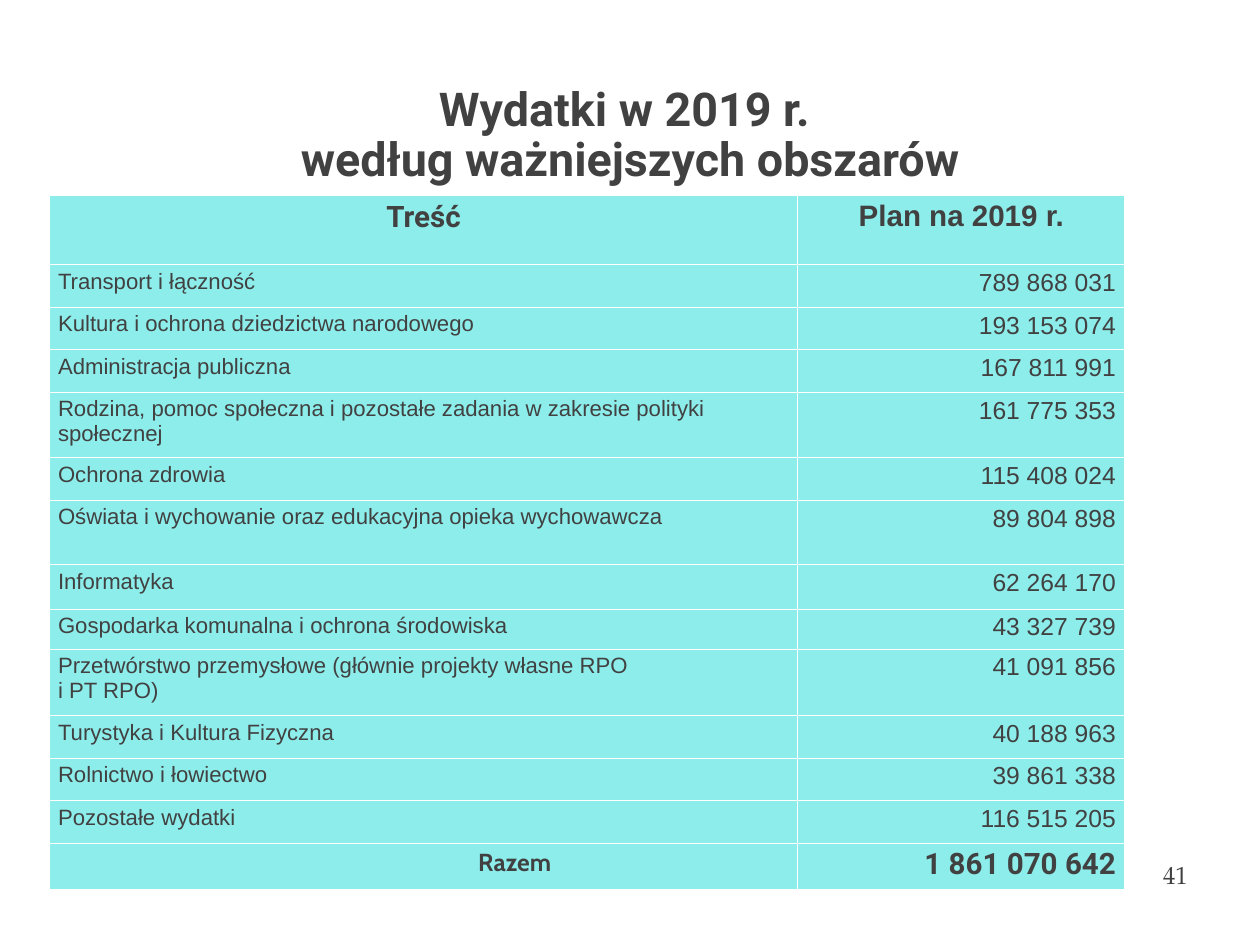
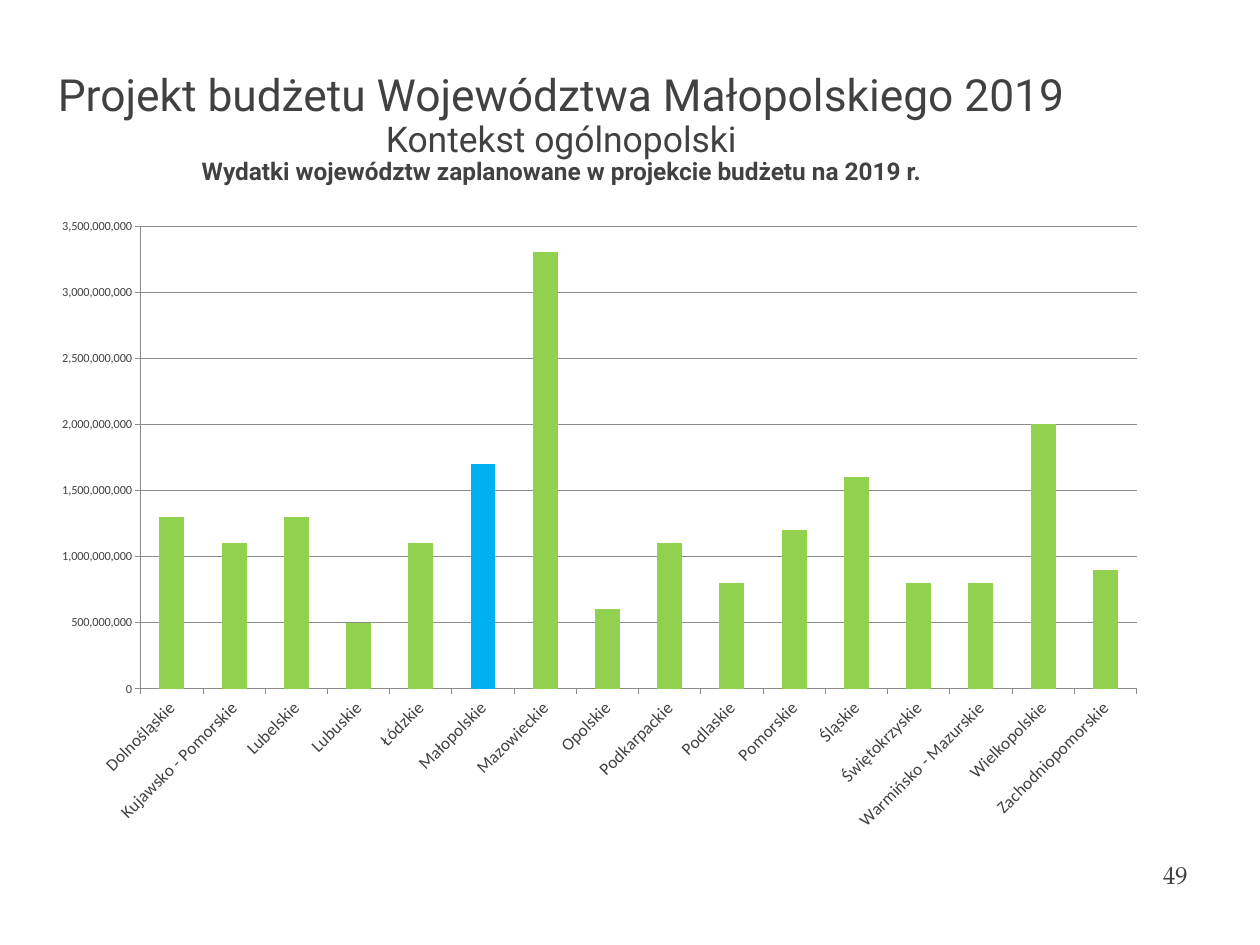
from lxml import etree
from pptx import Presentation
from pptx.chart.data import CategoryChartData
from pptx.dml.color import RGBColor
from pptx.enum.chart import XL_CHART_TYPE, XL_TICK_MARK
from pptx.enum.text import MSO_ANCHOR, PP_ALIGN
from pptx.oxml.ns import qn
from pptx.util import Inches, Pt

LEFT, CENTER, RIGHT = PP_ALIGN.LEFT, PP_ALIGN.CENTER, PP_ALIGN.RIGHT
MIDDLE = MSO_ANCHOR.MIDDLE
COLUMNS = XL_CHART_TYPE.COLUMN_CLUSTERED
TICK_OUTSIDE, TICK_NONE = XL_TICK_MARK.OUTSIDE, XL_TICK_MARK.NONE

WIDTH, HEIGHT = Inches(14.22), Inches(10.67)
COLORS = {
    "text": "414141",
    "cell": "8DEDEB",
    "border": "FFFFFF",
    "region": "92D050",
    "highlight": "00B0F0",
    "grid": "8B8B8B",
}
HEADING = {"name": "Roboto", "size": Pt(37.9), "bold": True}
MAIN_TITLE = {"name": "Roboto", "size": Pt(36), "bold": False}
SUBTITLE = {"name": "Roboto", "size": Pt(28.8), "bold": False}
CAPTION = {"name": "Roboto", "size": Pt(19.8), "bold": True}
PAGE_NUMBER = {"name": "TeX Gyre Pagella", "size": Pt(20), "bold": False}
HEAD_AREA = {"name": "Roboto", "size": Pt(24), "bold": True}
HEAD_PLAN = {"name": "Arial", "size": Pt(24), "bold": True}
AREA = {"name": "Arial", "size": Pt(18), "bold": False}
AMOUNT = {"name": "Arial", "size": Pt(20), "bold": False}
TOTAL = {"name": "Cabin", "size": Pt(20), "bold": True}


def share(left, top, width, height):
    return [int(side * part / 100) for side, part in
            zip((WIDTH, HEIGHT, WIDTH, HEIGHT), (left, top, width, height))]


def write(frame, paragraphs, align, spacing=None):
    frame.word_wrap = True
    for index, lines in enumerate(paragraphs):
        paragraph = frame.add_paragraph() if index else frame.paragraphs[0]
        paragraph.alignment = align
        paragraph.line_spacing = spacing
        for position, (text, style) in enumerate(lines):
            if position:
                paragraph.add_line_break()
            run = paragraph.add_run()
            run.text = text
            for key, value in style.items():
                setattr(run.font, key, value)
            run.font.color.rgb = RGBColor.from_string(COLORS["text"])


pages = [
    {"number": "41", "place": share(3.94, 8.2, 92.19, 12.46), "lift": 0,
     "title": [("Wydatki w 2019 r. ", HEADING),
               ("według ważniejszych obszarów", HEADING)]},
    {"number": "49", "place": share(-1.55, 12.28, 92.19, 5.81), "lift": 0.31,
     "title": [("Projekt budżetu Województwa Małopolskiego 2019", MAIN_TITLE),
               ("Kontekst ogólnopolski", SUBTITLE),
               ("Wydatki województw zaplanowane w projekcie budżetu na 2019 r.", CAPTION)]},
]

presentation = Presentation()
presentation.slide_width, presentation.slide_height = WIDTH, HEIGHT
slides = []
for page in pages:
    slide = presentation.slides.add_slide(presentation.slide_layouts[6])
    slides.append(slide)
    number = [(page["number"], PAGE_NUMBER)]
    for place, lines, inset, lift, spacing in (
        (share(90.44, 90.44, 5.7, 4.22), number, 0.06, 0, None),
        (page["place"], page["title"], 0, page["lift"], 0.9),
    ):
        frame = slide.shapes.add_textbox(*place).text_frame
        frame.vertical_anchor = MIDDLE
        for side in ("left", "top", "right", "bottom"):
            setattr(frame, f"margin_{side}", Inches(inset))
        frame.margin_bottom = Inches(inset + lift)
        write(frame, [lines], CENTER, spacing)
spending_slide, regions_slide = slides

spending = [
    (0.78, ["Treść"], "Plan na 2019 r."),
    (0.48, ["Transport i łączność"], "789 868 031"),
    (0.48, ["Kultura i ochrona dziedzictwa narodowego"], "193 153 074"),
    (0.48, ["Administracja publiczna"], "167 811 991"),
    (0.74, ["Rodzina, pomoc społeczna i pozostałe zadania w zakresie polityki społecznej"],
     "161 775 353"),
    (0.48, ["Ochrona zdrowia"], "115 408 024"),
    (0.73, ["Oświata i wychowanie oraz edukacyjna opieka wychowawcza"], "89 804 898"),
    (0.5, ["Informatyka"], "62 264 170"),
    (0.45, ["Gospodarka komunalna i ochrona środowiska"], "43 327 739"),
    (0.75, ["Przetwórstwo przemysłowe (głównie projekty własne RPO", "i PT RPO)"],
     "41 091 856"),
    (0.48, ["Turystyka i Kultura Fizyczna"], "40 188 963"),
    (0.48, ["Rolnictwo i łowiectwo"], "39 861 338"),
    (0.48, ["Pozostałe wydatki"], "116 515 205"),
    (0.53, ["Razem"], "1 861 070 642"),
]
last = len(spending) - 1
row_styles = {
    0: ((HEAD_AREA, CENTER), (HEAD_PLAN, CENTER)),
    last: ((TOTAL, CENTER), (HEAD_AREA, RIGHT)),
}
body_styles = ((AREA, LEFT), (AMOUNT, RIGHT))

table = spending_slide.shapes.add_table(
    len(spending), 2, *share(3.9, 20.71, 85.37, 73.57)).table
table.first_row = table.horz_banding = False
for column, width in zip(table.columns, (8.45, 3.69)):
    column.width = Inches(width)
for row, (height, area, amount) in enumerate(spending):
    table.rows[row].height = Inches(height)
    styles = row_styles.get(row, body_styles)
    for column, (lines, (style, align)) in enumerate(zip((area, [amount]), styles)):
        cell = table.cell(row, column)
        write(cell.text_frame, [[(line, style)] for line in lines], align)
        properties = cell._tc.get_or_add_tcPr()
        for edge in ("lnL", "lnR", "lnT", "lnB"):
            border = etree.SubElement(properties, qn(f"a:{edge}"), w=str(Pt(1)))
            fill = etree.SubElement(border, qn("a:solidFill"))
            etree.SubElement(fill, qn("a:srgbClr"), val=COLORS["border"])
        cell.fill.solid()
        cell.fill.fore_color.rgb = RGBColor.from_string(COLORS["cell"])
table.cell(last, 0).margin_left = Inches(2.16)

plans = {
    "Dolnośląskie": 1300000000,
    "Kujawsko - Pomorskie": 1100000000,
    "Lubelskie": 1300000000,
    "Lubuskie": 500000000,
    "Łódzkie": 1100000000,
    "Małopolskie": 1700000000,
    "Mazowieckie": 3300000000,
    "Opolskie": 600000000,
    "Podkarpackie": 1100000000,
    "Podlaskie": 800000000,
    "Pomorskie": 1200000000,
    "Śląskie": 1600000000,
    "Świętokrzyskie": 800000000,
    "Warmińsko - Mazurskie": 800000000,
    "Wielkopolskie": 2000000000,
    "Zachodniopomorskie": 900000000,
}
plan_data = CategoryChartData(number_format="#,##0")
plan_data.categories = list(plans)
plan_data.add_series("Series 1", list(plans.values()))
chart = regions_slide.shapes.add_chart(
    COLUMNS, *share(3.16, 21.84, 88.82, 67.48), plan_data).chart
chart.has_title = chart.has_legend = False
for key, value in {"name": "Calibri", "size": Pt(10)}.items():
    setattr(chart.font, key, value)
chart.font.color.rgb = RGBColor.from_string(COLORS["text"])

plot = chart.plots[0]
plot.gap_width = 150
plot.vary_by_categories = False
bars = plot.series[0]
malopolskie = bars.points[list(plans).index("Małopolskie")]
for part, color in ((bars, "region"), (malopolskie, "highlight")):
    part.format.fill.solid()
    part.format.fill.fore_color.rgb = RGBColor.from_string(COLORS[color])

regions, amounts = chart.category_axis, chart.value_axis
amounts.minimum_scale, amounts.maximum_scale = 0, 3500000000
amounts.major_unit = 500000000
amounts.has_major_gridlines = True
amounts.tick_labels.number_format = "#,##0"
amounts.tick_labels.number_format_is_linked = False
for axis in (regions, amounts):
    axis.major_tick_mark, axis.minor_tick_mark = TICK_OUTSIDE, TICK_NONE
for ruled in (regions, amounts, amounts.major_gridlines):
    ruled.format.line.color.rgb = RGBColor.from_string(COLORS["grid"])
    ruled.format.line.width = Pt(0.75)
regions.tick_labels.font.size = Pt(14)
regions._element.find(qn("c:txPr")).find(qn("a:bodyPr")).set("rot", "-2700000")

presentation.save("out.pptx")
